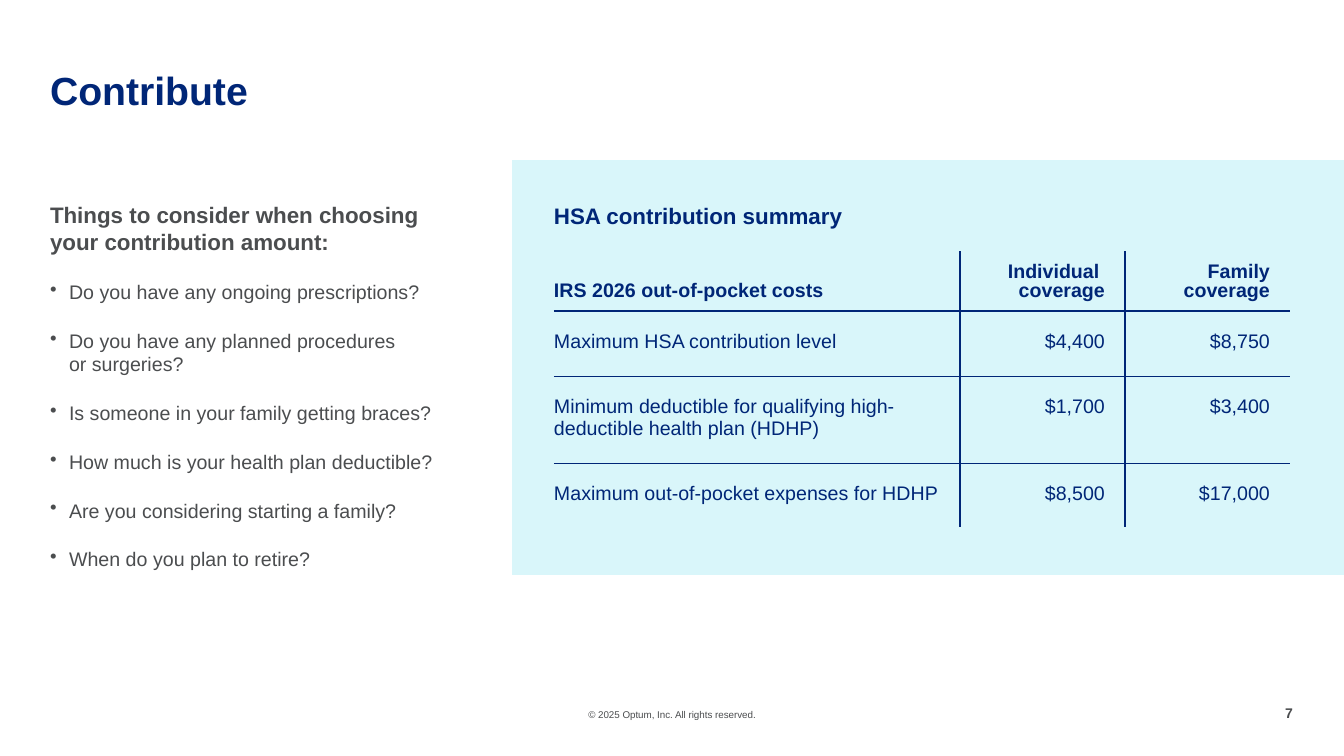
import pptx
import pptx.util
import pptx.dml.color
import pptx.enum.shapes
import pptx.enum.text
import pptx.oxml
import pptx.oxml.ns

NAVY, GRAY, AQUA = "002677", "4B4D4F", "D9F6FA"
ALIGN = pptx.enum.text.PP_ALIGN
ANCHOR = pptx.enum.text.MSO_ANCHOR

COSTS = [
    ["IRS 2026 out-of-pocket costs", "Individual \ncoverage", "Family\ncoverage"],
    ["Maximum HSA contribution level", "$4,400", "$8,750"],
    ["Minimum deductible for qualifying high- deductible health plan (HDHP)",
     "$1,700", "$3,400"],
    ["Maximum out-of-pocket expenses for HDHP", "$8,500", "$17,000"],
]
ASKS = [
    "Do you have any ongoing prescriptions?",
    "Do you have any planned procedures \nor surgeries?",
    "Is someone in your family getting braces?",
    "How much is your health plan deductible?",
    "Are you considering starting a family?",
    "When do you plan to retire?",
]


def px(n):
    return pptx.util.Emu(round(n * 914400 / 100.8))


def color(code):
    return pptx.dml.color.RGBColor.from_string(code)


def style(para, size, code, bold=False, align=ALIGN.LEFT):
    para.alignment = align
    font = para.font
    font.name = "Arial"
    font.size = pptx.util.Pt(size)
    font.bold = bold
    font.color.rgb = color(code)


def label(slide, box, text, size, code, bold=False, align=ALIGN.LEFT):
    frame = slide.shapes.add_textbox(*map(px, box)).text_frame
    frame.margin_left = frame.margin_right = 0
    frame.margin_top = frame.margin_bottom = 0
    frame.word_wrap = True
    para = frame.paragraphs[0]
    para.text = text
    style(para, size, code, bold, align)
    return frame


def bullet(para):
    props = para._p.get_or_add_pPr()
    props.set("marL", str(px(19)))
    props.set("indent", str(px(-19)))
    mark = pptx.oxml.parse_xml(
        f'<a:buChar {pptx.oxml.ns.nsdecls("a")} char="•"/>')
    props.append(mark)


def border(cell, side, width):
    # A width of 0 hides the edge
    fill = (f'<a:solidFill><a:srgbClr val="{NAVY}"/></a:solidFill>'
            if width else "<a:noFill/>")
    line = pptx.oxml.parse_xml(
        f'<a:ln{side} {pptx.oxml.ns.nsdecls("a")} '
        f'w="{pptx.util.Pt(width)}">{fill}</a:ln{side}>')
    cell._tc.get_or_add_tcPr().append(line)


# Left column: heading and questions
def asks(slide, x, y, w, h):
    frame = label(slide, (x, y, w, h),
                  "Things to consider when choosing \nyour contribution amount:",
                  16, GRAY, True)
    for ask in ASKS:
        para = frame.add_paragraph()
        para.text = ask
        para.space_before = pptx.util.Pt(18)
        bullet(para)
        style(para, 14, GRAY)


# Cost table with rules between rows and columns
def costs(slide, x, y):
    wide, high = [406, 165, 165], [59, 65, 87, 64]
    rules = [0, 2.25, 0.25, 0.25, 0]
    grid = slide.shapes.add_table(
        len(high), len(wide), px(x), px(y), px(sum(wide)), px(sum(high))).table
    grid.first_row = grid.horz_banding = False
    for col, w in zip(grid.columns, wide):
        col.width = px(w)
    for row, h in zip(grid.rows, high):
        row.height = px(h)
    for r, row in enumerate(COSTS):
        head = r == 0
        for c, text in enumerate(row):
            cell = grid.cell(r, c)
            cell.margin_left = 0
            cell.margin_right = px(20 if c else 0)
            cell.margin_top = cell.margin_bottom = px(10 if head else 20)
            cell.vertical_anchor = ANCHOR.BOTTOM if head else ANCHOR.TOP
            border(cell, "L", 1 if c else 0)
            border(cell, "R", 1 if c < len(wide) - 1 else 0)
            border(cell, "T", rules[r])
            border(cell, "B", rules[r + 1])
            cell.fill.background()
            para = cell.text_frame.paragraphs[0]
            para.text = text
            if head:
                para.line_spacing = 0.85
            style(para, 14, NAVY, head, ALIGN.RIGHT if c else ALIGN.LEFT)


# Right panel: tinted ground, heading and table
def panel(slide, x, y, w, h):
    ground = slide.shapes.add_shape(
        pptx.enum.shapes.MSO_SHAPE.RECTANGLE, *map(px, (x, y, w, h)))
    ground.shadow.inherit = False
    ground.fill.solid()
    ground.fill.fore_color.rgb = color(AQUA)
    ground.line.fill.background()
    label(slide, (x + 42, y + 42, w - 93, 36),
          "HSA contribution summary", 16, NAVY, True)
    costs(slide, x + 42, y + 91)


# Footer: copyright line and page number
def footer(slide, x, y, w):
    label(slide, (x + 468, y + 4, 308, 12),
          "© 2025 Optum, Inc. All rights reserved.", 7, GRAY, align=ALIGN.CENTER)
    label(slide, (x + w - 17, y, 17, 17), "7", 10, GRAY, True, ALIGN.RIGHT)


def main():
    deck = pptx.Presentation()
    deck.slide_width, deck.slide_height = px(1344), px(756)
    slide = deck.slides.add_slide(deck.slide_layouts[6])
    label(slide, (50, 66, 428, 43), "Contribute", 28, NAVY, True)
    asks(slide, 50, 201, 428, 368)
    panel(slide, 512, 160, 832, 415)
    footer(slide, 50, 705, 1243)
    deck.save("out.pptx")


if __name__ == "__main__":
    main()
